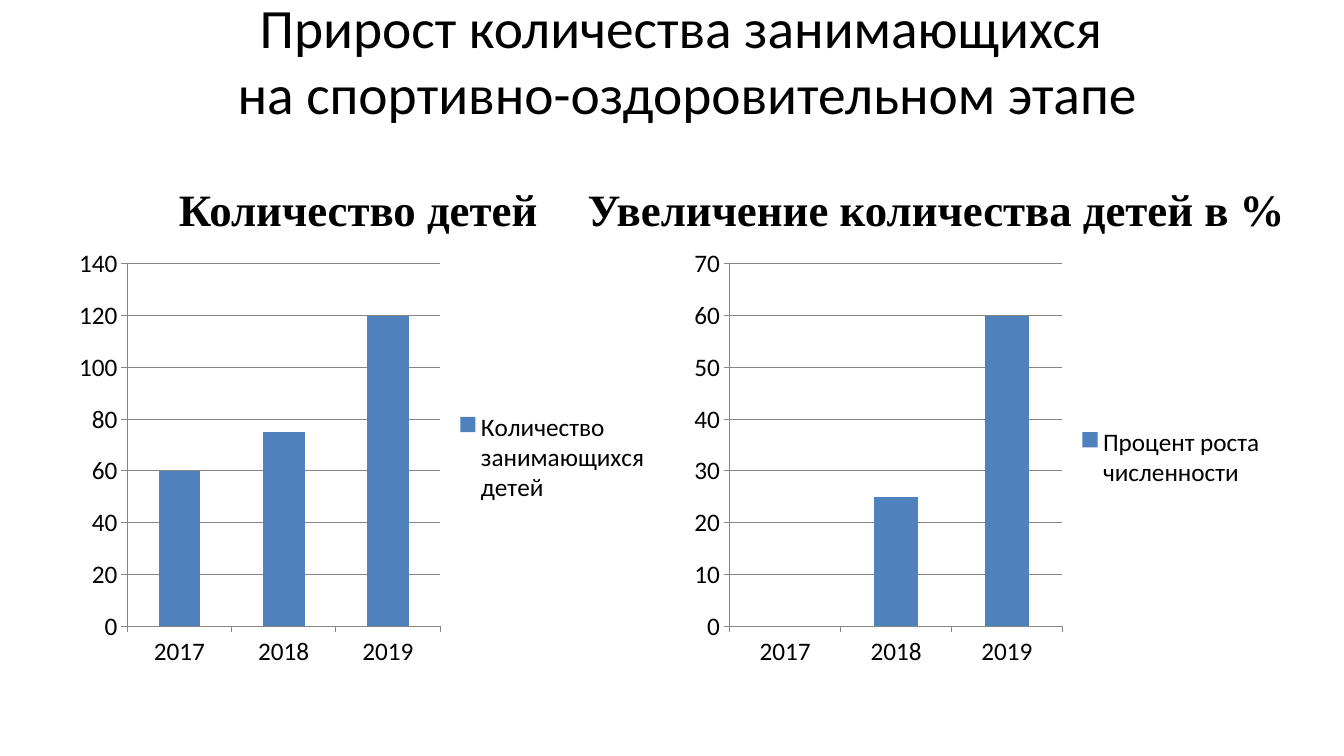
from dataclasses import dataclass

from pptx import Presentation
from pptx.chart.data import CategoryChartData
from pptx.dml.color import RGBColor
from pptx.enum.chart import XL_CHART_TYPE, XL_LEGEND_POSITION, XL_TICK_MARK
from pptx.enum.text import MSO_ANCHOR, PP_ALIGN
from pptx.util import Pt

CLUSTER = XL_CHART_TYPE.COLUMN_CLUSTERED
STACK = XL_CHART_TYPE.COLUMN_STACKED
RIGHT = XL_LEGEND_POSITION.RIGHT
OUT = XL_TICK_MARK.OUTSIDE
MIDDLE, BOTTOM = MSO_ANCHOR.MIDDLE, MSO_ANCHOR.BOTTOM
LEFT, CENTER = PP_ALIGN.LEFT, PP_ALIGN.CENTER


@dataclass
class Theme:
    ink: RGBColor = RGBColor(0, 0, 0)
    bar: RGBColor = RGBColor(0x4F, 0x81, 0xBD)
    grid: RGBColor = RGBColor(0x86, 0x86, 0x86)
    sans: str = "Calibri"
    serif: str = "Times New Roman"
    title: float = 39.6
    head: float = 32
    label: float = 18


class Deck:
    def __init__(self, theme):
        self.theme = theme
        self.file = Presentation()
        self.file.slide_width, self.file.slide_height = Pt(960), Pt(540)
        self.slide = self.file.slides.add_slide(self.file.slide_layouts[6])

    def style(self, font, size, name, bold=False):
        font.size, font.name, font.bold = Pt(size), name, bold
        font.color.rgb = self.theme.ink

    def text(self, words, box, size, name, align, anchor, bold=False, foot=3.6):
        frame = self.slide.shapes.add_textbox(*map(Pt, box)).text_frame
        frame.word_wrap = True
        frame.vertical_anchor = anchor
        frame.margin_bottom = Pt(foot)
        frame.text = words
        for par in frame.paragraphs:
            par.alignment = align
            for run in par.runs:
                self.style(run.font, size, name, bold)

    def chart(self, kind, box, name, years, values, top, step):
        data = CategoryChartData()
        data.categories = years
        data.add_series(name, values)
        chart = self.slide.shapes.add_chart(kind, *map(Pt, box), data).chart
        self.style(chart.font, self.theme.label, self.theme.sans)
        chart.has_title = False
        chart.has_legend = True
        chart.legend.position = RIGHT
        chart.legend.include_in_layout = False

        # Bars
        plot = chart.plots[0]
        plot.vary_by_categories = False
        plot.gap_width = 150
        plot.overlap = 100 if kind == STACK else 0
        fill = plot.series[0].format.fill
        fill.solid()
        fill.fore_color.rgb = self.theme.bar

        # Axes and grid
        scale = chart.value_axis
        scale.minimum_scale, scale.maximum_scale = 0, top
        scale.major_unit = step
        scale.has_major_gridlines = True
        self.line(scale.major_gridlines.format.line)
        for axis in (scale, chart.category_axis):
            axis.major_tick_mark = OUT
            self.line(axis.format.line)

    def line(self, line):
        line.color.rgb = self.theme.grid
        line.width = Pt(0.75)


def main():
    theme = Theme()
    deck = Deck(theme)
    years = ["2017", "2018", "2019"]
    edge, wide, gap = 48, 424, 15.5
    head_y, head_h, plot_h = 121, 50.4, 311
    plot_y = head_y + head_h

    # Title
    deck.text("Прирост количества занимающихся \vна спортивно-оздоровительном этапе",
              (131, 21.6, 720, 90), theme.title, theme.sans, CENTER, MIDDLE, foot=52)

    # Headings
    deck.text("Количество детей ", (edge, head_y, wide, head_h),
              theme.head, theme.serif, CENTER, BOTTOM, bold=True)
    deck.text("Увеличение количества детей в %", (412.6, head_y, 547.2, head_h),
              theme.head, theme.serif, LEFT, BOTTOM, bold=True)

    # Charts
    charts = [
        (CLUSTER, "Количество занимающихся детей", (60, 75, 120), 140, 20),
        (STACK, "Процент роста численности", (0, 25, 60), 70, 10),
    ]
    for i, (kind, name, values, top, step) in enumerate(charts):
        box = (edge + i * (wide + gap), plot_y, wide, plot_h)
        deck.chart(kind, box, name, years, values, top, step)

    deck.file.save("out.pptx")


if __name__ == "__main__":
    main()
